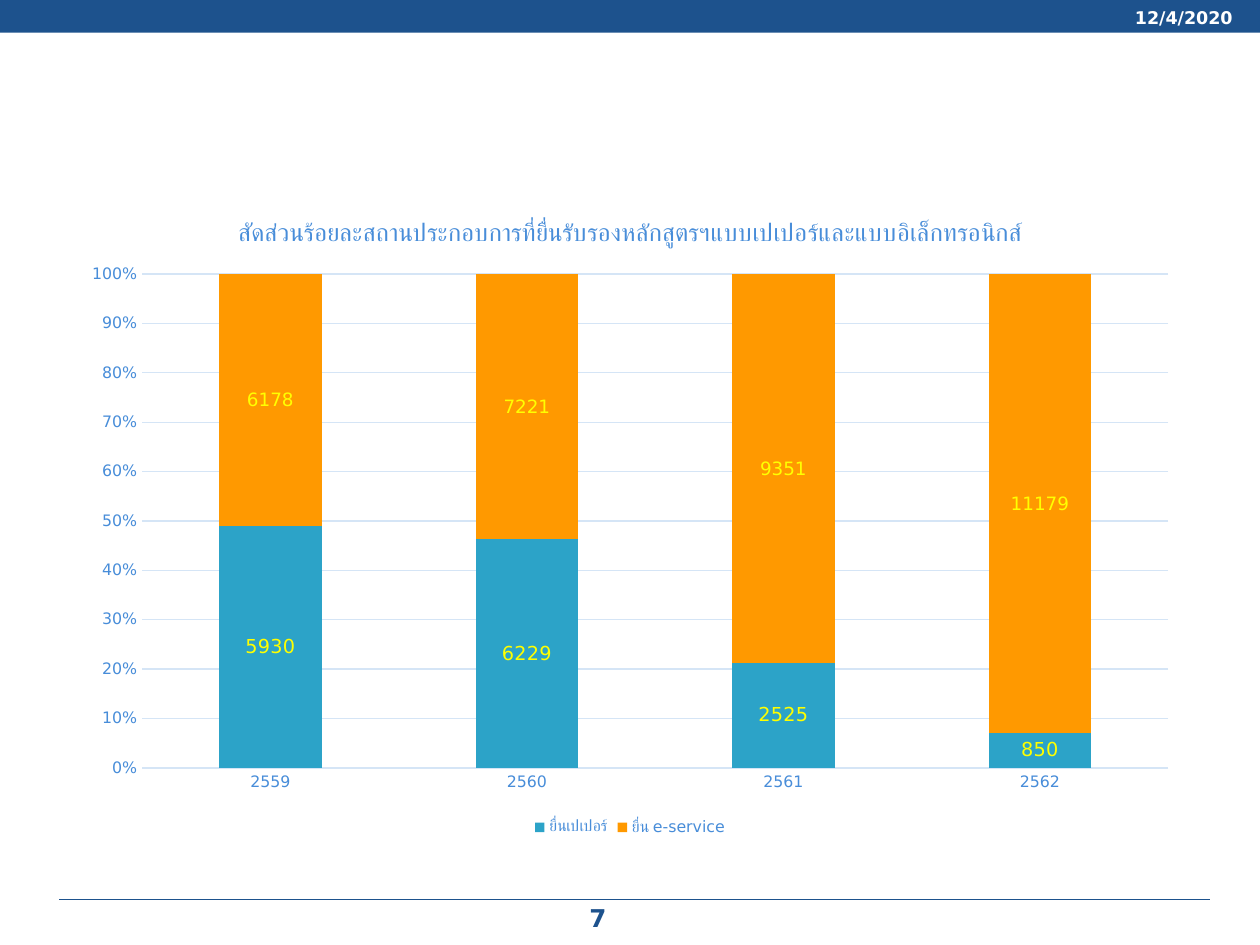
from lxml import etree
from pptx import Presentation
from pptx.chart.data import CategoryChartData
from pptx.dml.color import RGBColor
from pptx.enum.chart import XL_CHART_TYPE as ChartType, XL_LEGEND_POSITION as LegendPosition
from pptx.enum.chart import XL_LABEL_POSITION as LabelPosition, XL_TICK_MARK as TickMark
from pptx.enum.shapes import MSO_CONNECTOR as Connector, MSO_SHAPE as Shape
from pptx.enum.text import MSO_ANCHOR as Anchor, PP_ALIGN as Align
from pptx.oxml import parse_xml
from pptx.oxml.ns import nsdecls, qn
from pptx.util import Inches, Pt

NAVY = RGBColor(0x1D, 0x52, 0x8D)
WHITE = RGBColor(0xFF, 0xFF, 0xFF)
SKY = RGBColor(0x48, 0x8D, 0xD9)
PALE = RGBColor(0xD5, 0xE5, 0xF6)
TEAL = RGBColor(0x2C, 0xA3, 0xC8)
ORANGE = RGBColor(0xFF, 0x99, 0x00)
YELLOW = RGBColor(0xFF, 0xFF, 0x00)
FONT = "DejaVu Sans"

TITLE = "สัดส่วนร้อยละสถานประกอบการที่ยื่นรับรองหลักสูตรฯแบบเปเปอร์และแบบอิเล็กทรอนิกส์"
YEARS = ["2559", "2560", "2561", "2562"]
# name, values, fill, label size
SERIES = [
    ("ยื่นเปเปอร์", [5930, 6229, 2525, 850], TEAL, 11),
    ("ยื่น e-service", [6178, 7221, 9351, 11179], ORANGE, 10.5),
]
PLOT_LAYOUT = {"x": 0.065, "y": 0.122, "w": 0.915, "h": 0.764}


def set_font(font, size, color, bold=False):
    formats = {"name": FONT, "size": Pt(size), "bold": bold}
    for name, value in formats.items():
        setattr(font, name, value)
    font.color.rgb = color


def add_bar(page, left, top, width, height):
    bar = page.shapes.add_shape(
        Shape.RECTANGLE, Inches(left), Inches(top), Inches(width), Inches(height))
    bar.shadow.inherit = False
    bar.fill.solid()
    bar.fill.fore_color.rgb = NAVY
    bar.line.fill.background()


def add_rule(page, left, right, y):
    rule = page.shapes.add_connector(
        Connector.STRAIGHT, Inches(left), Inches(y), Inches(right), Inches(y))
    rule.line.color.rgb = NAVY
    rule.line.width = Pt(0.75)
    etree.SubElement(rule._element.spPr, qn("a:effectLst"))


def add_text(page, text, left, top, width, height, align, size, color):
    box = page.shapes.add_textbox(
        Inches(left), Inches(top), Inches(width), Inches(height))
    frame = box.text_frame
    formats = {"word_wrap": True, "vertical_anchor": Anchor.MIDDLE,
               "margin_top": 0, "margin_bottom": 0}
    for name, value in formats.items():
        setattr(frame, name, value)
    para = frame.paragraphs[0]
    para.alignment = align
    span = para.add_run()
    span.text = text
    set_font(span.font, size, color, bold=True)


def style_axis(axis):
    axis.major_tick_mark = axis.minor_tick_mark = TickMark.NONE
    set_font(axis.tick_labels.font, 9, SKY)


def style_series(series, color, label_size):
    series.format.fill.solid()
    series.format.fill.fore_color.rgb = color
    labels = series.data_labels
    labels.show_value = True
    labels.position = LabelPosition.CENTER
    set_font(labels.font, label_size, YELLOW)


def place_plot(chart):
    """Fix the inner plot area as fractions of the chart."""
    sizes = "".join(f'<c:{key} val="{value}"/>' for key, value in PLOT_LAYOUT.items())
    layout = parse_xml(
        f'<c:layout {nsdecls("c")}><c:manualLayout><c:layoutTarget val="inner"/>'
        f'<c:xMode val="edge"/><c:yMode val="edge"/>{sizes}</c:manualLayout></c:layout>')
    area = chart._chartSpace.chart.plotArea
    for old in area.findall(qn("c:layout")):
        area.remove(old)
    area.insert(0, layout)


def add_share_chart(page, left, top, width, height):
    data = CategoryChartData()
    data.categories = YEARS
    for name, values, _, _ in SERIES:
        data.add_series(name, values)
    chart = page.shapes.add_chart(
        ChartType.COLUMN_STACKED_100, Inches(left), Inches(top),
        Inches(width), Inches(height), data).chart
    set_font(chart.font, 10, NAVY)

    # Title
    chart.has_title = True
    para = chart.chart_title.text_frame.paragraphs[0]
    span = para.add_run()
    span.text = TITLE
    set_font(span.font, 14, SKY)
    chart.chart_title.include_in_layout = False

    # Columns
    plot = chart.plots[0]
    plot.vary_by_categories = False
    plot.gap_width, plot.overlap = 150, 100
    for series, (_, _, color, label_size) in zip(plot.series, SERIES):
        style_series(series, color, label_size)

    # Axes and gridlines
    years, shares = chart.category_axis, chart.value_axis
    for axis in (years, shares):
        style_axis(axis)
    shares.format.line.fill.background()
    shares.minimum_scale, shares.maximum_scale, shares.major_unit = 0, 1, 0.1
    shares.tick_labels.number_format = "0%"
    shares.tick_labels.number_format_is_linked = False
    for part in (years, shares.major_gridlines):
        part.format.line.color.rgb = PALE
        part.format.line.width = Pt(0.75)

    # Legend
    chart.has_legend = True
    chart.legend.position = LegendPosition.BOTTOM
    chart.legend.include_in_layout = False
    set_font(chart.legend.font, 9, SKY)
    place_plot(chart)


def main():
    deck = Presentation()
    deck.slide_width, deck.slide_height = Inches(10), Inches(7.5)
    page = deck.slides.add_slide(deck.slide_layouts[6])

    # Header band and footer rule
    add_bar(page, 0, 0, 10, 0.26)
    add_rule(page, 0.47, 9.6, 7.14)

    # Date and page number
    add_text(page, "12/4/2020", 7.13, 0, 2.75, 0.28, Align.RIGHT, 10, WHITE)
    add_text(page, "7", 3.58, 7.12, 2.33, 0.33, Align.CENTER, 14, NAVY)

    add_share_chart(page, 0.55, 1.55, 8.9, 5.13)
    deck.save("out.pptx")


if __name__ == "__main__":
    main()
